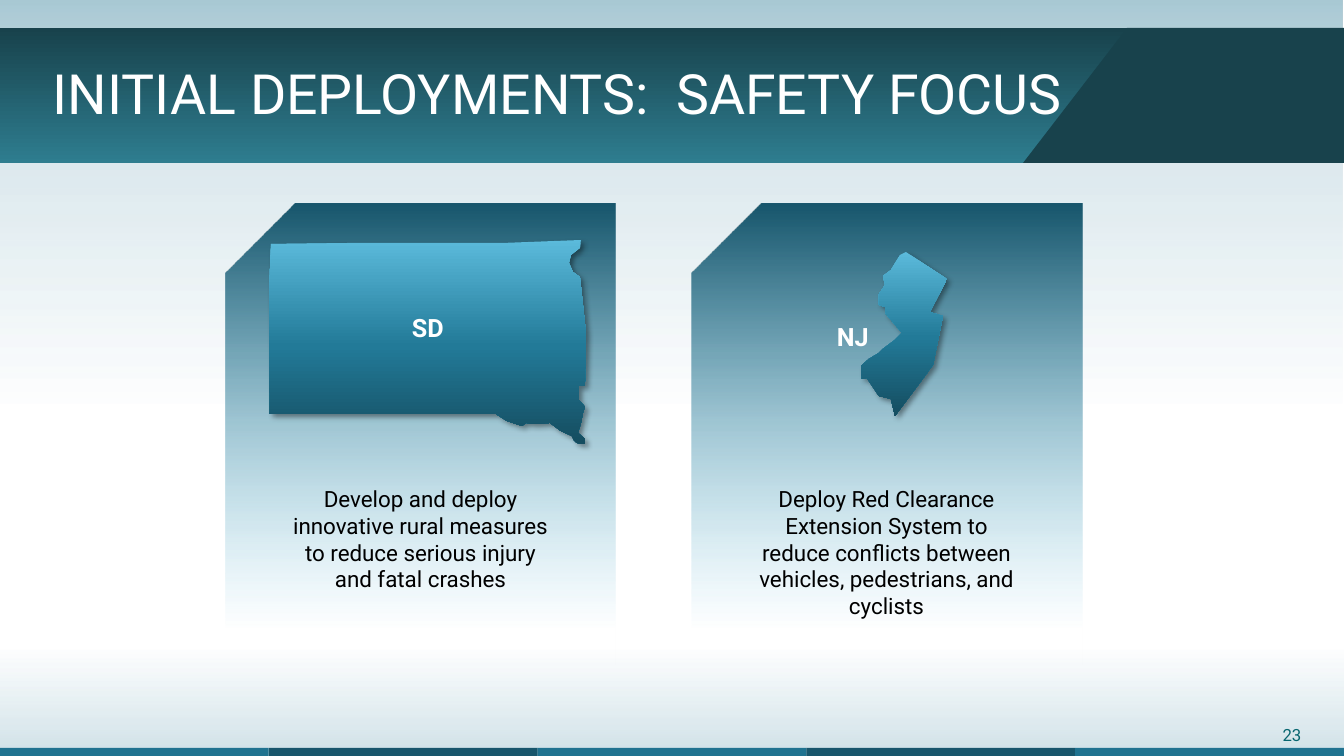
from lxml import etree
from pptx import Presentation
from pptx.dml.color import RGBColor
from pptx.enum.shapes import MSO_SHAPE
from pptx.enum.text import MSO_ANCHOR, PP_ALIGN
from pptx.oxml.ns import qn
from pptx.util import Pt

RECTANGLE = MSO_SHAPE.RECTANGLE
SNIPPED_RECTANGLE = MSO_SHAPE.SNIP_2_DIAG_RECTANGLE
LEFT, CENTER = PP_ALIGN.LEFT, PP_ALIGN.CENTER
TOP, MIDDLE = MSO_ANCHOR.TOP, MSO_ANCHOR.MIDDLE

SLIDE_WIDTH, SLIDE_HEIGHT = 1344, 756
EMU_PER_PX = 12192000 / SLIDE_WIDTH
FONT = "Roboto"
BLUE, DEEP_BLUE, DARK_TEAL = "207390", "18566C", "18424C"
WHITE, BLACK, PAGE_TEAL = "FFFFFF", "000000", "086670"

SKY_GRADIENT = [(0, BLUE, 39), (29, BLUE, 18), (100, BLUE, 0)]
GROUND_GRADIENT = [(8, BLUE, 0), (88, BLUE, 18), (100, BLUE, 22)]
HEADER_GRADIENT = [(0, DARK_TEAL, 100), (100, "2E7D8F", 100)]
CARD_GRADIENT = [(0, DEEP_BLUE, 100), (80, "5BBADB", 0)]
STATE_GRADIENT = [(0, "5BBADB", 100), (52, "227A98", 100), (100, "154D60", 100)]

SOUTH_DAKOTA = [
    (316, 146), (310, 146), (310, 160), (316, 167), (314, 173), (312, 183),
    (309, 193), (316, 199), (316, 204), (308, 203), (305, 200), (303, 196),
    (292, 191), (281, 183), (266, 184), (257, 183), (253, 186), (238, 181),
    (227, 174), (1, 174), (0, 57), (2, 4), (82, 3), (166, 3), (234, 3),
    (312, 0), (311, 8), (302, 15), (300, 23), (304, 32), (311, 37), (317, 93),
]
NEW_JERSEY = [
    (86, 27), (69, 60), (82, 64), (72, 113), (34, 164), (30, 147), (18, 144),
    (6, 126), (1, 127), (0, 114), (8, 107), (18, 101), (22, 97), (34, 88),
    (41, 81), (25, 62), (24, 55), (18, 53), (18, 42), (24, 33), (22, 24),
    (30, 18), (39, 3), (45, 0),
]
CARDS = [
    {"outline": SOUTH_DAKOTA, "state_at": (43, 36), "label": "SD", "label_at": (176, 103),
     "body": "Develop and deploy innovative rural measures to reduce serious injury and fatal crashes"},
    {"outline": NEW_JERSEY, "state_at": (169, 48), "label": "NJ", "label_at": (135, 112),
     "body": "Deploy Red Clearance Extension System to reduce conflicts between vehicles, "
             "pedestrians, and cyclists"},
]


def px(length):
    return round(length * EMU_PER_PX)


def color(value):
    return RGBColor.from_string(value)


def add_color(parent, value, opacity):
    element = etree.SubElement(parent, qn("a:srgbClr"), val=value)
    if opacity < 100:
        etree.SubElement(element, qn("a:alpha"), val=str(opacity * 1000))


def paint(shape, fill):
    shape.shadow.inherit = False
    shape.line.fill.background()
    if isinstance(fill, str):
        shape.fill.solid()
        shape.fill.fore_color.rgb = color(fill)
        return
    shape.fill.gradient()
    shape.fill.gradient_angle = 270
    stops = shape._element.spPr.find(qn("a:gradFill")).find(qn("a:gsLst"))
    for stop in list(stops):
        stops.remove(stop)
    for position, value, opacity in fill:
        stop = etree.SubElement(stops, qn("a:gs"), pos=str(position * 1000))
        add_color(stop, value, opacity)


def add_shadow(shape):
    effects = shape._element.spPr.find(qn("a:effectLst"))
    shadow = etree.SubElement(
        effects, qn("a:outerShdw"), blurRad=str(Pt(4)), dist=str(Pt(3)),
        dir=str(45 * 60000), algn="tl", rotWithShape="0")
    add_color(shadow, BLACK, 40)


def add_box(slide, box, fill, kind=RECTANGLE):
    shape = slide.shapes.add_shape(kind, *map(px, box))
    paint(shape, fill)
    return shape


def add_outline(slide, left, top, points, fill):
    placed = [(px(left + x), px(top + y)) for x, y in points]
    builder = slide.shapes.build_freeform(*placed[0])
    builder.add_line_segments(placed[1:], close=True)
    shape = builder.convert_to_shape()
    paint(shape, fill)
    return shape


def add_text(slide, box, text, size, fill, bold=False, align=LEFT, anchor=TOP,
             wrap=True, line_spacing=None):
    frame = slide.shapes.add_textbox(*map(px, box)).text_frame
    frame.word_wrap = wrap
    frame.vertical_anchor = anchor
    paragraph = frame.paragraphs[0]
    paragraph.alignment = align
    paragraph.line_spacing = line_spacing
    run = paragraph.add_run()
    run.text = text
    run.font.name = FONT
    run.font.size = Pt(size)
    run.font.bold = bold
    run.font.color.rgb = color(fill)


def add_background(slide, width, height):
    add_box(slide, (0, height - 116, width, 116), GROUND_GRADIENT)
    add_box(slide, (0, 0, width, 407), SKY_GRADIENT)


def add_header(slide, left, top, width, height):
    add_box(slide, (left, top, width, height), HEADER_GRADIENT)
    corner = [(104, 0), (321, 0), (321, height), (0, height)]
    add_outline(slide, left + width - 321, top, corner, DARK_TEAL)
    add_text(slide, (left + 43, top + 3, 1058, 131), "INITIAL DEPLOYMENTS:  SAFETY FOCUS",
             39.6, WHITE, anchor=MIDDLE, line_spacing=0.9)


def add_footer(slide, left, top, width, height):
    add_text(slide, (left + width - 104, top - 28, 104, 30), "23", 12, PAGE_TEAL, align=CENTER)
    tile_width = width / 5
    for index in range(5):
        fill = DEEP_BLUE if index % 2 else BLUE
        add_box(slide, (left + index * tile_width, top, tile_width, height), fill)


def add_card(slide, left, top, width, height, card):
    panel = add_box(slide, (left, top, width, height), CARD_GRADIENT, SNIPPED_RECTANGLE)
    panel.adjustments[0] = 0.178
    panel.adjustments[1] = 0
    state_x, state_y = card["state_at"]
    state = add_outline(slide, left + state_x, top + state_y, card["outline"], STATE_GRADIENT)
    add_shadow(state)
    label_x, label_y = card["label_at"]
    add_text(slide, (left + label_x, top + label_y, 52, 40), card["label"], 18, WHITE,
             bold=True, wrap=False)
    add_text(slide, (left + 48, top + 276, 293, 119), card["body"], 16, BLACK, align=CENTER)


def main():
    presentation = Presentation()
    presentation.slide_width = px(SLIDE_WIDTH)
    presentation.slide_height = px(SLIDE_HEIGHT)
    slide = presentation.slides.add_slide(presentation.slide_layouts[6])
    add_background(slide, SLIDE_WIDTH, SLIDE_HEIGHT)
    add_header(slide, 0, 28, SLIDE_WIDTH, 135)
    add_footer(slide, 0, 748, SLIDE_WIDTH, 10)
    for index, card in enumerate(CARDS):
        add_card(slide, 226 + index * 466, 204, 390, 530, card)
    presentation.save("out.pptx")


if __name__ == "__main__":
    main()
